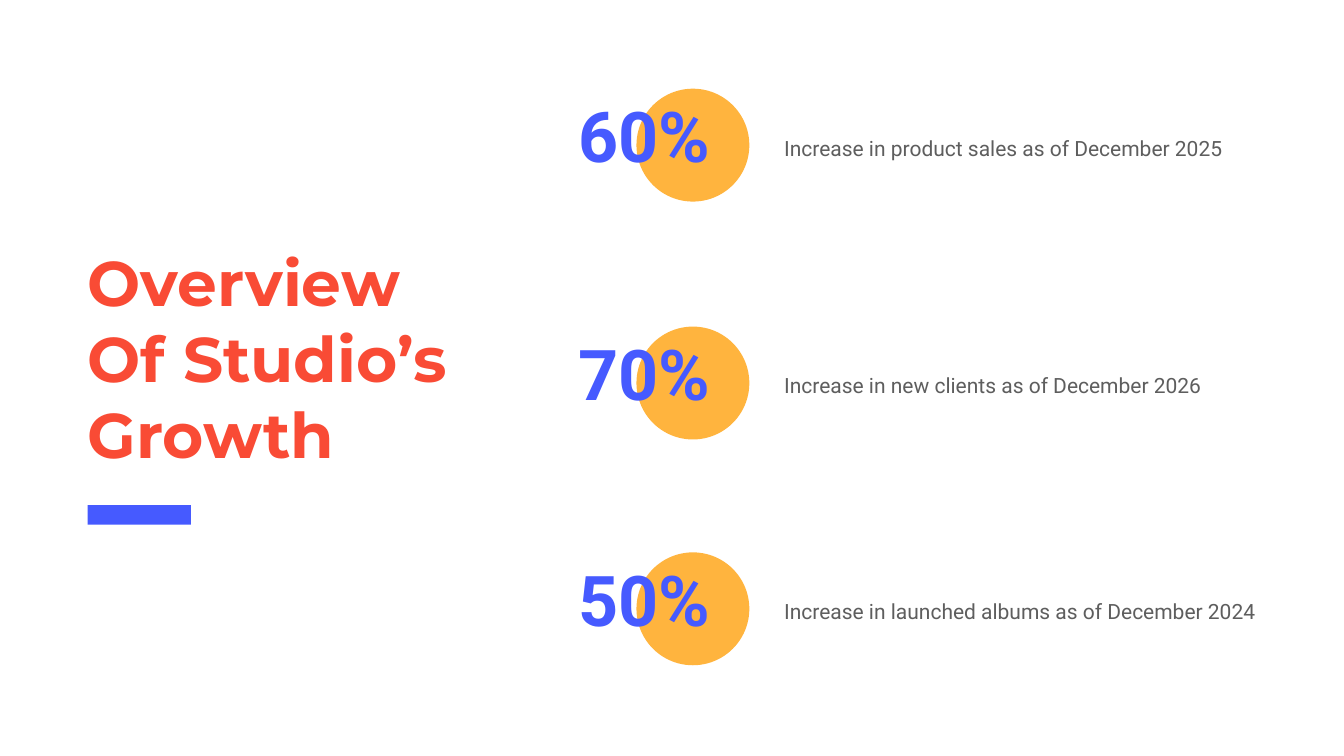
from pptx import Presentation
from pptx.dml.color import RGBColor
from pptx.enum.shapes import MSO_SHAPE
from pptx.enum.text import MSO_ANCHOR, MSO_AUTO_SIZE, PP_ALIGN
from pptx.util import Inches, Pt

RED, BLUE, ORANGE, GRAY = "F94B35", "465AFF", "FFB43E", "5E5E5E"


def color(hex_code):
    return RGBColor.from_string(hex_code)


def place(shape, left, top, width, height):
    shape.left, shape.top = Inches(left), Inches(top)
    shape.width, shape.height = Inches(width), Inches(height)


def write(shape, text, size, font, hex_code, inset=0.06, bold=False,
          align=PP_ALIGN.LEFT, spacing=1.0):
    """Fill a shape with one vertically centred, single-run paragraph."""
    frame = shape.text_frame
    frame.word_wrap = True
    frame.auto_size = MSO_AUTO_SIZE.NONE
    frame.vertical_anchor = MSO_ANCHOR.MIDDLE
    frame.margin_left = frame.margin_right = Inches(inset)
    frame.margin_top = frame.margin_bottom = Inches(inset)
    para = frame.paragraphs[0]
    para.alignment = align
    para.line_spacing = spacing
    span = para.add_run()
    span.text = text
    span.font.size = Pt(size)
    span.font.name = font
    span.font.bold = bold
    span.font.color.rgb = color(hex_code)


def add_solid(page, kind, left, top, width, height, hex_code):
    shape = page.shapes.add_shape(
        kind, Inches(left), Inches(top), Inches(width), Inches(height))
    shape.shadow.inherit = False
    shape.fill.solid()
    shape.fill.fore_color.rgb = color(hex_code)
    shape.line.fill.background()


def add_text(page, left, top, width, height, *content, **style):
    box = page.shapes.add_textbox(
        Inches(left), Inches(top), Inches(width), Inches(height))
    write(box, *content, **style)


def add_heading(page, left, top, width, height):
    """Title with a short accent bar below it."""
    title = page.shapes.title
    place(title, left, top, width, height)
    write(title, "Overview Of Studio’s Growth", 90, "Montserrat", RED,
          inset=0, bold=True)
    add_solid(page, MSO_SHAPE.RECTANGLE, left, top + height + 0.64,
              2.05, 0.39, BLUE)


def add_statistic(page, left, top, width, value, caption):
    """Percentage over a circle, with its caption on the right."""
    add_solid(page, MSO_SHAPE.OVAL, left + 1.21, top, 2.24, 2.24, ORANGE)
    add_text(page, left + 4.08, top + 0.82, width - 4.08, 0.6,
             caption, 30, "Roboto", GRAY,
             align=PP_ALIGN.JUSTIFY, spacing=1.2)
    add_text(page, left, top + 0.25, 3.4, 1.74,
             value, 100, "Roboto", BLUE, bold=True, spacing=0.7)


def main():
    deck = Presentation()
    deck.slide_width, deck.slide_height = Inches(26.67), Inches(15)
    page = deck.slides.add_slide(deck.slide_layouts[5])
    page.background.fill.solid()
    page.background.fill.fore_color.rgb = color("FFFFFF")

    add_heading(page, 1.74, 4.8, 7.15, 4.58)
    statistics = [
        (1.76, "60%", "Increase in product sales as of December 2025"),
        (6.48, "70%", "Increase in new clients as of December 2026"),
        (10.96, "50%", "Increase in launched albums as of December 2024"),
    ]
    for top, value, caption in statistics:
        add_statistic(page, 11.42, top, 13.73, value, caption)
    deck.save("out.pptx")


if __name__ == "__main__":
    main()
